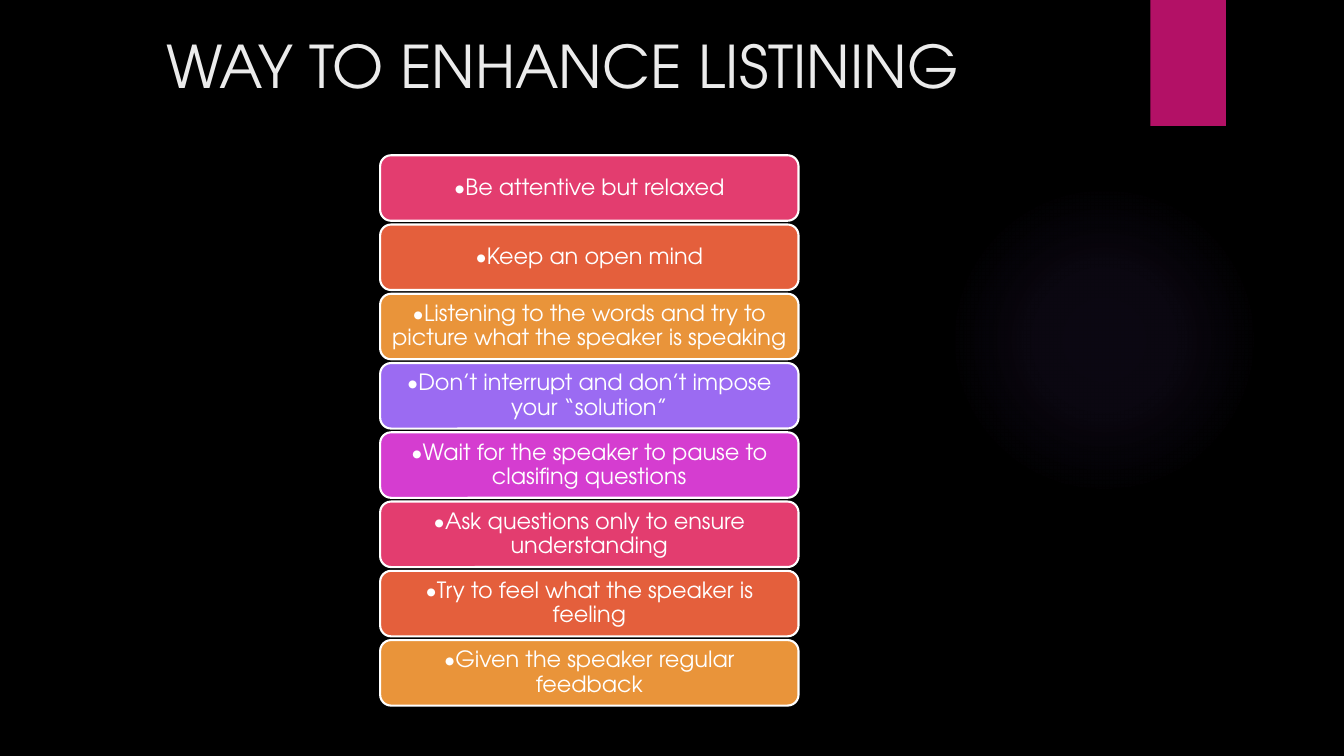
"""Build a slide listing ways to enhance listening."""
import pptx
import pptx.dml.color
import pptx.enum.shapes
import pptx.enum.text
import pptx.oxml
import pptx.oxml.ns
import pptx.util

Inches = pptx.util.Inches
Pt = pptx.util.Pt
RGBColor = pptx.dml.color.RGBColor
ShapeType = pptx.enum.shapes.MSO_SHAPE
Anchor = pptx.enum.text.MSO_ANCHOR
Align = pptx.enum.text.PP_ALIGN

BLACK = RGBColor(0x00, 0x00, 0x00)
WHITE = RGBColor(0xFF, 0xFF, 0xFF)
TITLE_GREY = RGBColor(0xEB, 0xEB, 0xEB)
MAGENTA = RGBColor(0xB3, 0x11, 0x66)
PINK = RGBColor(0xE3, 0x3D, 0x6F)
ORANGE = RGBColor(0xE4, 0x5F, 0x3C)
AMBER = RGBColor(0xE9, 0x94, 0x3A)
VIOLET = RGBColor(0x9B, 0x6B, 0xF2)
ORCHID = RGBColor(0xD5, 0x3D, 0xD0)
TIP_COLORS = [PINK, ORANGE, AMBER, VIOLET, ORCHID]

FONT_NAME = "TeX Gyre Adventor"
GLOW_STOPS = [(0, 7), (36, 6), (69, 0)]
FIRST_TIP_TOP, LAST_TIP_TOP = 1.54, 6.35
TIPS = [
    "•Be attentive but relaxed",
    "•Keep an open mind",
    "•Listening to the words and try to picture what the speaker is speaking",
    "•Don’t interrupt and don’t impose your “solution”",
    "•Wait for the speaker to pause to clasifing questions",
    "•Ask questions only to ensure understanding",
    "•Try to feel what the speaker is feeling",
    "•Given the speaker regular feedback",
]


def apply_format(target, values):
    """Set each named attribute on the target."""
    for name, value in values.items():
        setattr(target, name, value)


def add_block(slide, shape_type, box, color):
    """Add a flat shape without outline or shadow."""
    shape = slide.shapes.add_shape(shape_type, *map(Inches, box))
    shape.shadow.inherit = False
    shape.fill.solid()
    shape.fill.fore_color.rgb = color
    shape.line.fill.background()
    return shape


def write_text(shape, text, size, color, frame_format, paragraph_format):
    """Write one formatted paragraph into a shape."""
    apply_format(shape.text_frame, {"word_wrap": True, **frame_format})
    paragraph = shape.text_frame.paragraphs[0]
    paragraph.text = text
    apply_format(paragraph, paragraph_format)
    apply_format(paragraph.font, {"name": FONT_NAME, "size": Pt(size)})
    paragraph.font.color.rgb = color


def add_glow(slide, box):
    """Add a circle that fades from its centre to transparent."""
    shape = add_block(slide, ShapeType.OVAL, box, VIOLET)
    stops = "".join(
        f'<a:gs pos="{position * 1000}"><a:srgbClr val="{VIOLET}">'
        f'<a:alpha val="{alpha * 1000}"/></a:srgbClr></a:gs>'
        for position, alpha in GLOW_STOPS
    )
    gradient = pptx.oxml.parse_xml(
        f'<a:gradFill {pptx.oxml.ns.nsdecls("a")}><a:gsLst>{stops}</a:gsLst>'
        '<a:path path="circle"><a:fillToRect l="50000" t="50000" '
        'r="50000" b="50000"/></a:path></a:gradFill>'
    )
    properties = shape.element.spPr
    properties.replace(properties.find(pptx.oxml.ns.qn("a:solidFill")), gradient)


def add_title(slide, text, box):
    """Add the slide heading."""
    title = slide.shapes.add_textbox(*map(Inches, box))
    write_text(title, text, 42, TITLE_GREY,
               {"vertical_anchor": Anchor.TOP}, {"alignment": Align.LEFT})


def add_tip(slide, text, top, color):
    """Add one rounded bar holding a listening tip."""
    bar = add_block(slide, ShapeType.ROUNDED_RECTANGLE,
                    (3.77, top, 4.15, 0.65), color)
    bar.line.color.rgb = WHITE
    bar.line.width = Pt(1.5)
    frame_format = {
        "vertical_anchor": Anchor.MIDDLE,
        "margin_left": Inches(0.07),
        "margin_right": Inches(0.07),
        "margin_top": Inches(0.03),
        "margin_bottom": Inches(0.03),
    }
    write_text(bar, text, 16, WHITE, frame_format,
               {"alignment": Align.CENTER, "line_spacing": 0.9})


def main():
    """Build and save the presentation."""
    presentation = pptx.Presentation()
    apply_format(presentation, {"slide_width": Inches(13.33),
                                "slide_height": Inches(7.5)})
    slide = presentation.slides.add_slide(presentation.slide_layouts[6])
    slide.background.fill.solid()
    slide.background.fill.fore_color.rgb = BLACK

    add_glow(slide, (9.41, 1.83, 3.08, 3.08))
    add_block(slide, ShapeType.RECTANGLE, (11.41, 0, 0.75, 1.25), MAGENTA)
    add_title(slide, "WAY TO ENHANCE LISTINING", (1.55, 0.25, 10.29, 1.29))
    pitch = (LAST_TIP_TOP - FIRST_TIP_TOP) / (len(TIPS) - 1)
    for index, tip in enumerate(TIPS):
        add_tip(slide, tip, FIRST_TIP_TOP + index * pitch,
                TIP_COLORS[index % len(TIP_COLORS)])
    presentation.save("out.pptx")


if __name__ == "__main__":
    main()
